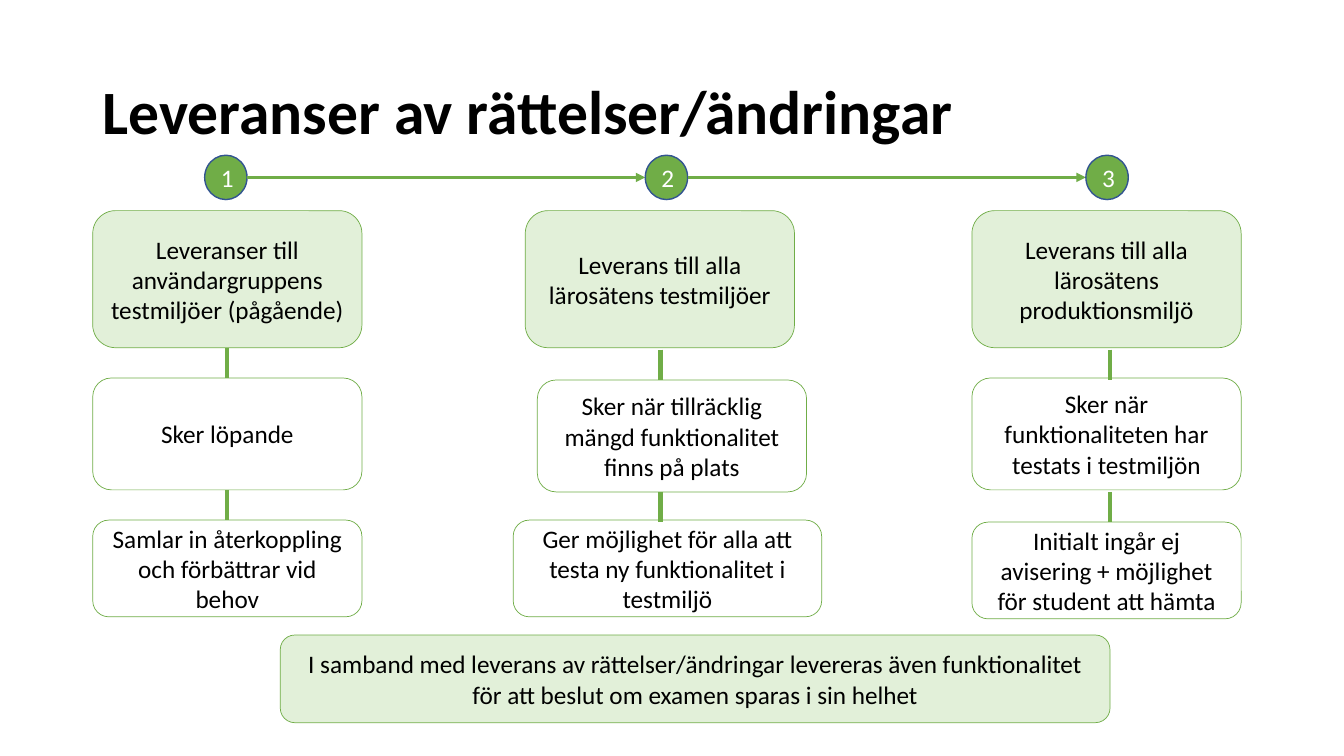
from dataclasses import dataclass

from lxml import etree
from pptx import Presentation
from pptx.dml.color import RGBColor
from pptx.enum import shapes, text
from pptx.oxml import ns
from pptx.util import Inches, Pt

COLORS = {
    "black": "000000",
    "white": "FFFFFF",
    "green": "70AD47",
    "pale": "E2F0D9",
    "blue": "325491",
}
FONT = "Calibri"
ROUNDED = shapes.MSO_SHAPE.FLOWCHART_ALTERNATE_PROCESS
BOX_WIDTH = 2.67
LINK_LENGTH = 0.3
STEP_LEFT, STEP_PITCH = 2.03, 4.37
STEP_TOP, STEP_WIDTH, STEP_HEIGHT = 1.54, 0.42, 0.44


@dataclass(frozen=True)
class Card:
    label: str
    left: float
    top: float
    height: float
    width: float = BOX_WIDTH
    fill: str = "white"
    line: str = "green"
    line_width: float = 0.5
    color: str = "black"
    preset: int = ROUNDED


@dataclass(frozen=True)
class Column:
    cards: tuple[Card, ...]
    link_x: float
    link_tops: tuple[float, float]
    joined: bool = False


def rgb(name: str) -> RGBColor:
    return RGBColor.from_string(COLORS[name])


def write(box, label: str, size: float, color: str, bold: bool = False,
          align=text.PP_ALIGN.CENTER, spacing: float = 1.0) -> None:
    frame = box.text_frame
    frame.word_wrap = True
    frame.vertical_anchor = text.MSO_ANCHOR.MIDDLE
    para = frame.paragraphs[0]
    para.alignment = align
    para.line_spacing = spacing
    span = para.add_run()
    span.text = label
    for name, value in {"name": FONT, "size": Pt(size), "bold": bold}.items():
        setattr(span.font, name, value)
    span.font.color.rgb = rgb(color)


def draw_card(page, card: Card):
    box = page.shapes.add_shape(
        card.preset, Inches(card.left), Inches(card.top),
        Inches(card.width), Inches(card.height))
    box.shadow.inherit = False
    box.fill.solid()
    box.fill.fore_color.rgb = rgb(card.fill)
    box.line.color.rgb = rgb(card.line)
    box.line.width = Pt(card.line_width)
    write(box, card.label, 18, card.color)
    return box


def draw_line(page, start: tuple[float, float], end: tuple[float, float],
              width: float, arrow: bool = False):
    line = page.shapes.add_connector(
        shapes.MSO_CONNECTOR.STRAIGHT,
        *(Inches(value) for value in (*start, *end)))
    line.line.color.rgb = rgb("green")
    line.line.width = Pt(width)
    if arrow:
        etree.SubElement(line.line._get_or_add_ln(), ns.qn("a:tailEnd"),
                         type="triangle")
    etree.SubElement(line._element.spPr, ns.qn("a:effectLst"))
    return line


def draw_column(page, column: Column) -> None:
    """Draw the stacked cards and the short links between them."""
    boxes = [draw_card(page, card) for card in column.cards]
    for upper, lower, top in zip(boxes, boxes[1:], column.link_tops):
        link = draw_line(page, (column.link_x, top),
                         (column.link_x, top + LINK_LENGTH), 3)
        if column.joined:
            link.begin_connect(upper, 2)
            link.end_connect(lower, 0)


def draw_steps(page, count: int) -> None:
    """Draw the numbered circles and the arrows from each to the next."""
    middle = STEP_TOP + STEP_HEIGHT / 2
    for index in range(count):
        left = STEP_LEFT + index * STEP_PITCH
        draw_card(page, Card(
            str(index + 1), left, STEP_TOP, STEP_HEIGHT, STEP_WIDTH,
            fill="green", line="blue", line_width=1, color="white",
            preset=shapes.MSO_SHAPE.OVAL))
        if index < count - 1:
            draw_line(page, (left + STEP_WIDTH, middle),
                      (left + STEP_PITCH, middle), 2.25, arrow=True)


COLUMNS = (
    Column((
        Card("Leveranser till användargruppens testmiljöer (pågående)",
             0.92, 2.09, 1.36, fill="pale"),
        Card("Sker löpande", 0.92, 3.75, 1.11),
        Card("Samlar in återkoppling och förbättrar vid behov",
             0.92, 5.16, 0.96),
    ), 2.25, (3.45, 4.88), joined=True),
    Column((
        Card("Leverans till alla lärosätens testmiljöer",
             5.21, 2.09, 1.36, fill="pale"),
        Card("Sker när tillräcklig mängd funktionalitet finns på plats",
             5.33, 3.77, 1.11),
        Card("Ger möjlighet för alla att testa ny funktionalitet i testmiljö",
             5.09, 5.16, 0.96, 3.06),
    ), 6.55, (3.47, 4.88)),
    Column((
        Card("Leverans till alla lärosätens produktionsmiljö",
             9.64, 2.09, 1.36, fill="pale"),
        Card("Sker när funktionaliteten har testats i testmiljön",
             9.64, 3.75, 1.11),
        Card("Initialt ingår ej avisering + möjlighet för student att hämta",
             9.64, 5.18, 0.96),
    ), 11.01, (3.47, 4.88)),
)
SUMMARY = Card(
    "I samband med leverans av rättelser/ändringar levereras även "
    "funktionalitet för att beslut om examen sparas i sin helhet",
    2.78, 6.3, 0.87, 8.23, fill="pale")


def main() -> None:
    deck = Presentation()
    deck.slide_width, deck.slide_height = Inches(13.33), Inches(7.5)
    page = deck.slides.add_slide(deck.slide_layouts[6])
    title = page.shapes.add_textbox(
        Inches(0.92), Inches(0.74), Inches(11.5), Inches(0.8))
    write(title, "Leveranser av rättelser/ändringar", 44, "black", bold=True,
          align=text.PP_ALIGN.LEFT, spacing=0.9)
    for column in COLUMNS:
        draw_column(page, column)
    draw_steps(page, len(COLUMNS))
    draw_card(page, SUMMARY)
    deck.save("out.pptx")


if __name__ == "__main__":
    main()
